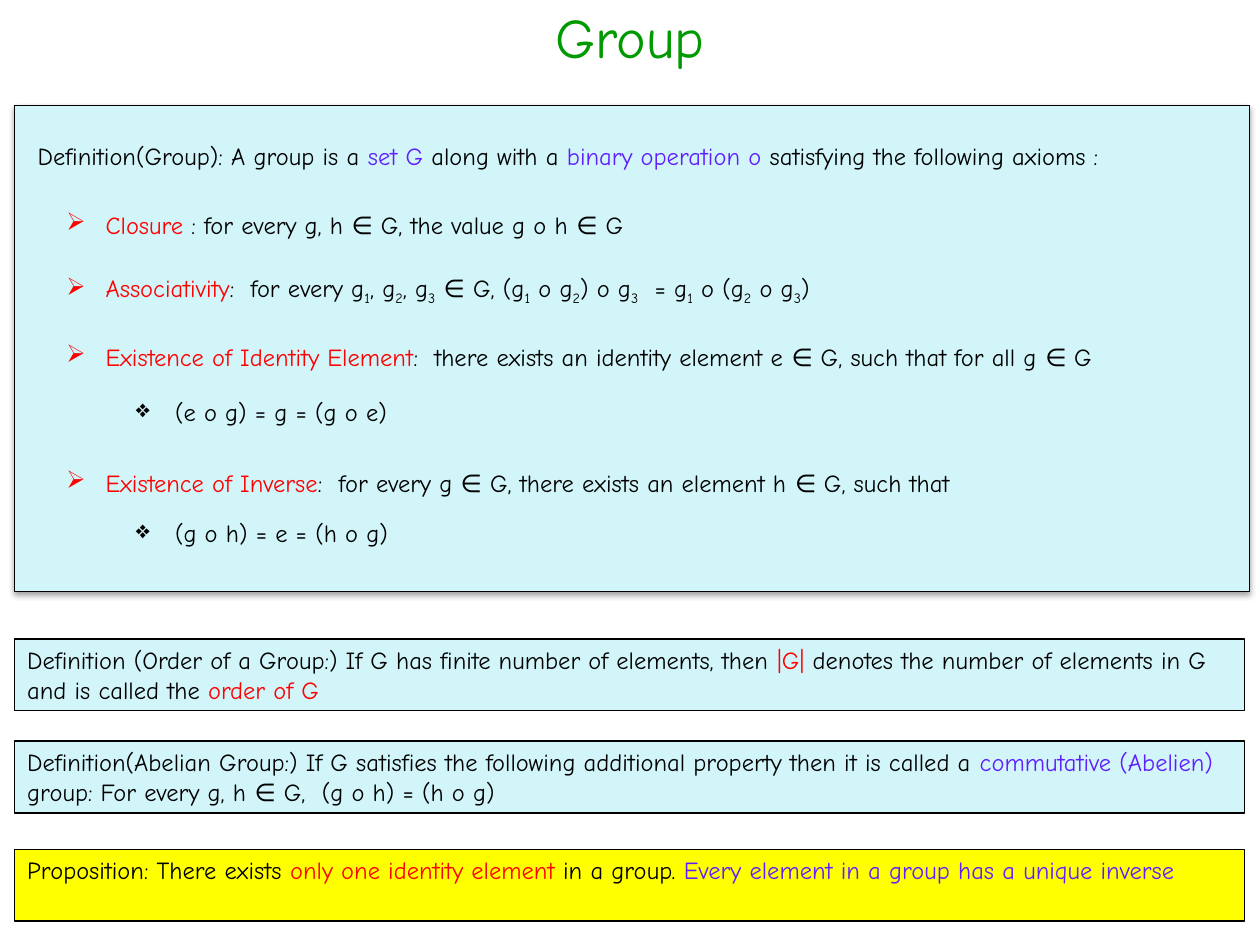
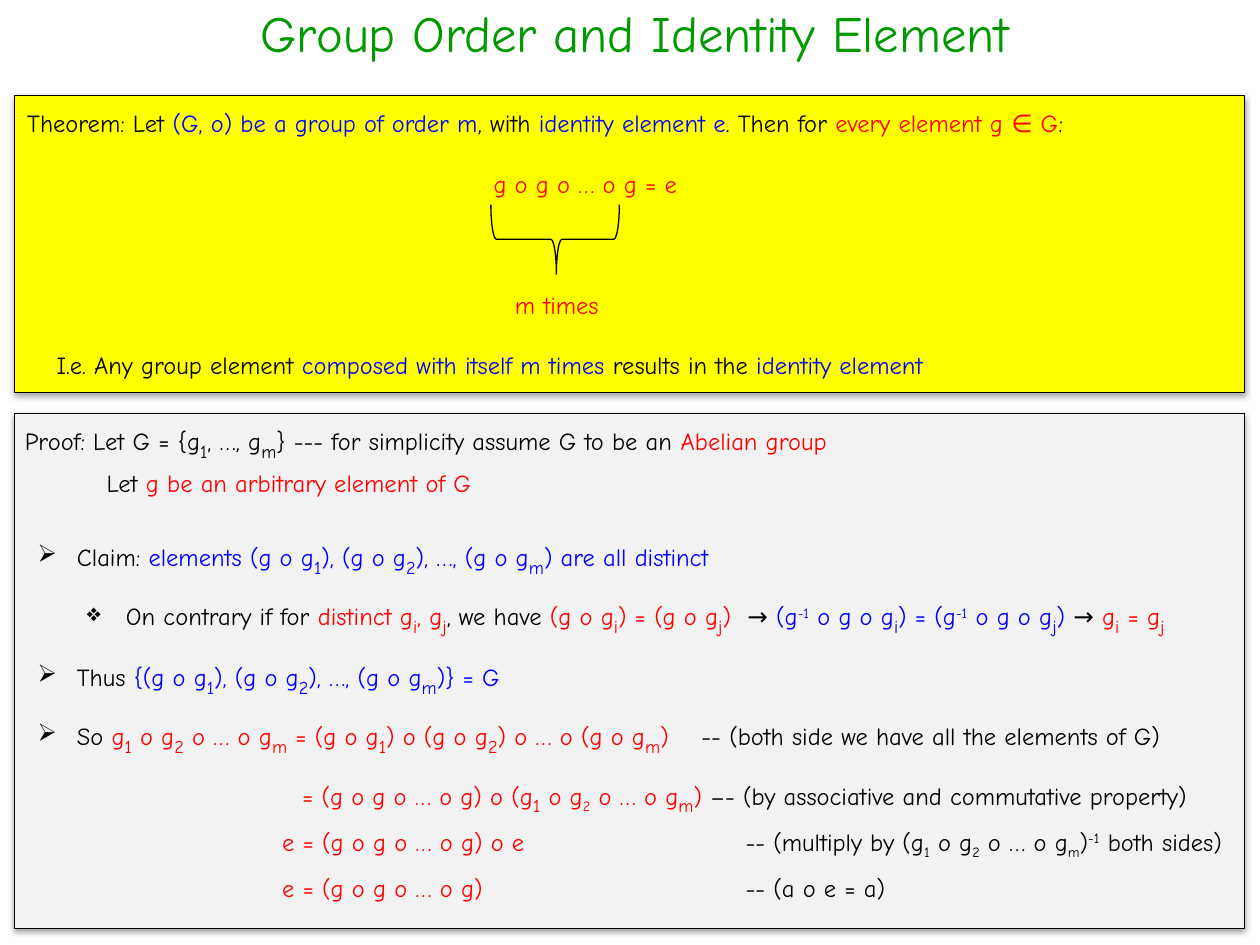
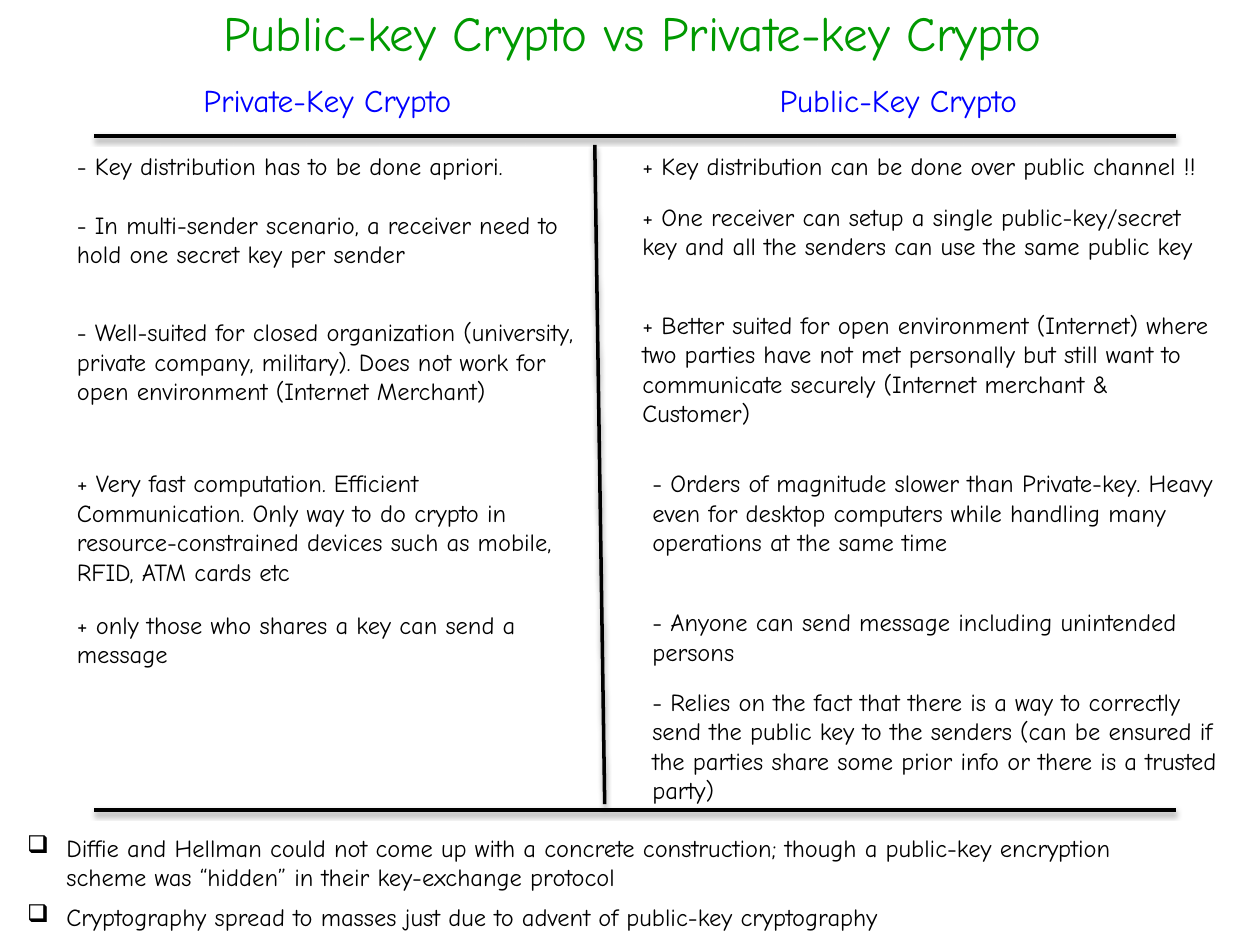
from dataclasses import dataclass
from lxml.etree import SubElement
from pptx import Presentation
from pptx.dml.color import RGBColor
from pptx.enum.shapes import MSO_CONNECTOR, MSO_SHAPE
from pptx.enum.text import MSO_ANCHOR, PP_ALIGN
from pptx.oxml.ns import qn
from pptx.util import Cm, Pt


@dataclass(frozen=True)
class Theme:
    font: str = "Comic Neue"
    black: str = "000000"
    red: str = "FF0000"
    blue: str = "0000FF"
    violet: str = "5E1EFE"
    green: str = "009900"
    aqua: str = "D2F5FA"
    yellow: str = "FFFF00"
    grey: str = "F2F2F2"
    body: int = 14
    large: int = 18
    thin: float = 0.75
    thick: float = 2
    indent: float = 0.79
    row: float = 0.86


T = Theme()

# mark: (letters it covers, type size, baseline shift)
MARKS = {"_": (1, T.body, -25000), "~": (1, T.large, -25000), "^": (2, T.body, 30000)}


@dataclass(frozen=True)
class Box:
    x: float
    y: float
    w: float
    h: float

    def sub(self, dx, dy, w=None, h=T.row):
        """Box offset from this one; without a width it reaches the right edge."""
        return Box(self.x + dx, self.y + dy, w or self.w - dx, h)

    def cm(self):
        return [Cm(v) for v in (self.x, self.y, self.w, self.h)]


def rgb(code):
    return RGBColor.from_string(code)


def pieces(text, size):
    """Split marked text into (text, size, baseline shift)."""
    plain, pos = "", 0
    while pos < len(text):
        if text[pos] in MARKS:
            if plain:
                yield plain, size, 0
            count, small, shift = MARKS[text[pos]]
            yield text[pos + 1:pos + 1 + count], small, shift
            plain, pos = "", pos + 1 + count
        else:
            plain, pos = plain + text[pos], pos + 1
    if plain:
        yield plain, size, 0


def write(frame, runs, size=T.body, mark=None, align=PP_ALIGN.LEFT):
    """Fill a frame; a run is black text or a pair of text and colour."""
    frame.word_wrap = True
    frame.vertical_anchor = MSO_ANCHOR.TOP
    para = frame.paragraphs[0]
    para.alignment = align
    if mark:
        props = para._p.get_or_add_pPr()
        props.set("marL", str(int(Cm(T.indent))))
        props.set("indent", str(-int(Cm(T.indent))))
        SubElement(props, qn("a:buChar")).set("char", mark)
    for item in runs:
        text, tint = (item, T.black) if isinstance(item, str) else item
        for part, points, shift in pieces(text, size):
            run = para.add_run()
            run.text = part
            run.font.name = T.font
            run.font.size = Pt(points)
            run.font.color.rgb = rgb(tint)
            if shift:
                run._r.get_or_add_rPr().set("baseline", str(shift))


def label(slide, box, *runs, **style):
    write(slide.shapes.add_textbox(*box.cm()).text_frame, runs, **style)


def title(slide, text, size, x=0, w=25.4):
    label(slide, Box(x, -0.08, w, 1.6), (text, T.green), size=size, align=PP_ALIGN.CENTER)


def cast(shape, dark):
    """Give a shape a soft shadow below it, or none."""
    effects = SubElement(shape._element.spPr, qn("a:effectLst"))
    if dark:
        glow = SubElement(effects, qn("a:outerShdw"), blurRad="39400", dist="22000",
                          dir="5400000", rotWithShape="0")
        tint = SubElement(glow, qn("a:srgbClr"), val=T.black)
        SubElement(tint, qn("a:alpha"), val="36000")


def edge(shape, width=T.thin):
    shape.line.color.rgb = rgb(T.black)
    shape.line.width = Pt(width)


def panel(slide, box, fill, *runs, dark=False):
    shape = slide.shapes.add_shape(MSO_SHAPE.RECTANGLE, *box.cm())
    shape.fill.solid()
    shape.fill.fore_color.rgb = rgb(fill)
    edge(shape)
    cast(shape, dark)
    if runs:
        write(shape.text_frame, runs)


def rule(slide, box, x1, y1, x2, y2):
    ends = box.x + x1, box.y + y1, box.x + x2, box.y + y2
    line = slide.shapes.add_connector(MSO_CONNECTOR.STRAIGHT, *map(Cm, ends))
    edge(line, T.thick)
    cast(line, True)


def axioms(slide, box):
    panel(slide, box, T.aqua, dark=True)
    label(slide, box.sub(0.21, 0.58), "Definition(Group): A group is a ", ("set G", T.violet),
          " along with a ", ("binary operation o ", T.violet),
          "satisfying the following axioms :")
    rules = [
        (1.98, "Closure", " : for every g, h ∈ G, the value g o h ∈ G"),
        (3.25, "Associativity", ":  for every g_1, g_2, g_3 ∈ G, "
         "(g_1 o g_2) o g_3  = g_1 o (g_2 o g_3)"),
        (4.65, "Existence of Identity Element",
         ":  there exists an identity element e ∈ G, such that for all g ∈ G"),
        (7.19, "Existence of Inverse",
         ":  for every g ∈ G, there exists an element h ∈ G, such that"),
    ]
    for y, name, text in rules:
        label(slide, box.sub(0.79, y), (name, T.red), text, mark="➢")
    for y, text in [(5.74, "(e o g) = g = (g o e)"), (8.18, "(g o h) = e = (h o g)")]:
        label(slide, box.sub(2.19, y), text, mark="❖")


def facts(slide, box):
    """Definitions and proposition, one bar each."""
    bars = [
        (0, T.aqua, ["Definition (Order of a Group:) If G has finite number of elements, then ",
                     ("|G|", T.red), " denotes the number of elements in G and is called the ",
                     ("order of G", T.red)]),
        (2.06, T.aqua, ["Definition(Abelian Group:) If G satisfies the following additional "
                        "property then it is called a ", ("commutative (Abelien) ", T.violet),
                        "group: For every g, h ∈ G,  (g o h) = (h o g)"]),
        (4.24, T.yellow, ["Proposition: There exists ", ("only one identity element ", T.red),
                          "in a group. ",
                          ("Every element in a group has a unique inverse", T.violet)]),
    ]
    for y, fill, runs in bars:
        panel(slide, box.sub(0, y, h=1.45), fill, *runs)


def theorem(slide, box):
    panel(slide, box, T.yellow, dark=True)
    label(slide, box.sub(0, 0.13), "Theorem: Let ", ("(G, o) be a group of order m", T.blue),
          ", with ", ("identity element e", T.blue), ". Then for ",
          ("every element g ∈ G", T.red), ":")
    label(slide, box.sub(9.4, 1.35, 4.6), ("g o g o … o g = e", T.red))
    brace = slide.shapes.add_shape(MSO_SHAPE.RIGHT_BRACE, *box.sub(10.19, 1.6, 1.4, 2.59).cm())
    brace.rotation = 90
    brace.adjustments[0] = 0.08
    brace.adjustments[1] = 0.49
    brace.fill.background()
    edge(brace)
    cast(brace, False)
    label(slide, box.sub(9.83, 3.79, 2.57), ("m times", T.red))
    label(slide, box.sub(0.59, 5), "I.e. Any group element ",
          ("composed with itself m times ", T.blue), "results in the ",
          ("identity element", T.blue))


def proof(slide, box):
    panel(slide, box, T.grey, dark=True)
    lines = [
        (-0.05, 0, None, ["Proof: Let G = {g~1, …, g~m} --- for simplicity assume G to be an ",
                          ("Abelian group", T.red)]),
        (1.6, 0.99, None, ["Let ", ("g be an arbitrary element of G", T.red)]),
        (0.21, 2.34, "➢", ["Claim: ", ("elements (g o g~1), (g o g~2), …, (g o g~m) "
                                       "are all distinct", T.blue)]),
        (1.2, 3.53, "❖", ["On contrary if for ", ("distinct g~i, g~j", T.red), ", we have ",
                          ("(g o g~i) = (g o g~j)  ", T.red), "→ ",
                          ("(g^-1 o g o g~i) = (g^-1 o g o g~j) ", T.blue), "→ ",
                          ("g~i = g~j", T.red)]),
        (0.21, 4.75, "➢", ["Thus ", ("{(g o g~1), (g o g~2), …, (g o g~m)} = G", T.blue)]),
        (0.21, 5.94, "➢", ["So ", ("g~1 o g~2 o … o g~m = "
                                   "(g o g~1) o (g o g~2) o … o (g o g~m)", T.red)]),
        (13.59, 6.08, None, ["-- (both side we have all the elements of G)"]),
        (5.54, 7.14, None, [("= (g o g o … o g) o (g~1 o g_2 o … o g~m) ", T.red),
                            "–- (by associative and commutative property)"]),
        (5.14, 8.21, None, [("e = (g o g o … o g) o e", T.red)]),
        (14.48, 8.21, None, ["-- (multiply by (g_1 o g_2 o … o g_m)^-1 both sides)"]),
        (5.14, 9.15, None, [("e = (g o g o … o g)", T.red)]),
        (14.48, 9.15, None, ["-- (a o e = a)"]),
    ]
    for x, y, mark, runs in lines:
        label(slide, box.sub(x, y), *runs, mark=mark)


def versus(slide, box):
    """Two ruled columns of pros and cons."""
    for x, w, head in [(2, 6.6, "Private-Key Crypto"), (12.01, 9.6, "Public-Key Crypto")]:
        label(slide, box.sub(x, 0, w, 1.02), (head, T.blue), size=T.large,
              align=PP_ALIGN.CENTER)
    rule(slide, box, 10.69, 1.42, 10.89, 14.71)
    for y in (1.24, box.h):
        rule(slide, box, 0.6, y, 22.4, y)
    points = [
        (0, 1.42, 10.8, "- Key distribution has to be done apriori."),
        (0, 2.61, 10.8, "- In multi-sender scenario, a receiver need to hold one secret key "
         "per sender"),
        (0, 4.77, 10.8, "- Well-suited for closed organization (university, private company, "
         "military). Does not work for open environment (Internet Merchant)"),
        (0, 7.82, 10.8, "+ Very fast computation. Efficient Communication. Only way to do "
         "crypto in resource-constrained devices such as mobile, RFID, ATM cards etc"),
        (0, 10.67, 10.8, "+ only those who shares a key can send a message"),
        (11.4, 1.42, 12.19, "+ Key distribution can be done over public channel !!"),
        (11.4, 2.44, 11.81, "+ One receiver can setup a single public-key/secret key and all "
         "the senders can use the same public key"),
        (11.4, 4.62, 12.19, "+ Better suited for open environment (Internet) where two parties "
         "have not met personally but still want to communicate securely (Internet merchant "
         "& Customer)"),
        (11.6, 7.82, 11.81, "- Orders of magnitude slower than Private-key. Heavy even for "
         "desktop computers while handling many operations at the same time"),
        (11.6, 10.62, 11.81, "- Anyone can send message including unintended persons"),
        (11.6, 12.22, 12.19, "- Relies on the fact that there is a way to correctly send the "
         "public key to the senders (can be ensured if the parties share some prior info or "
         "there is a trusted party)"),
    ]
    for x, y, w, text in points:
        label(slide, box.sub(x, y, w), text)


def notes(slide, box):
    """Closing remarks below the columns."""
    label(slide, box.sub(0, 0), "Diffie and Hellman could not come up with a concrete "
          "construction; though a public-key encryption scheme was “hidden” in their "
          "key-exchange protocol", mark="❑")
    label(slide, box.sub(0, 1.4), "Cryptography spread to masses just due to advent of "
          "public-key cryptography", mark="❑")


def main():
    deck = Presentation()
    deck.slide_width, deck.slide_height = Cm(25.4), Cm(19.05)
    group, order, keys = [deck.slides.add_slide(deck.slide_layouts[6]) for _ in range(3)]

    title(group, "Group", 32)
    axioms(group, Box(0.3, 2.13, 24.89, 9.8))
    facts(group, Box(0.3, 12.88, 24.79, 5.69))

    title(order, "Group Order and Identity Element", 29, -0.89, 27.4)
    theorem(order, Box(0.3, 1.93, 24.79, 5.99))
    proof(order, Box(0.3, 8.33, 24.79, 10.39))

    title(keys, "Public-key Crypto vs Private-key Crypto", 28, -0.3, 26.1)
    versus(keys, Box(1.3, 1.5, 23.8, 14.83))
    notes(keys, Box(0.3, 16.66, 23.8, 2.26))

    deck.save("out.pptx")


if __name__ == "__main__":
    main()
